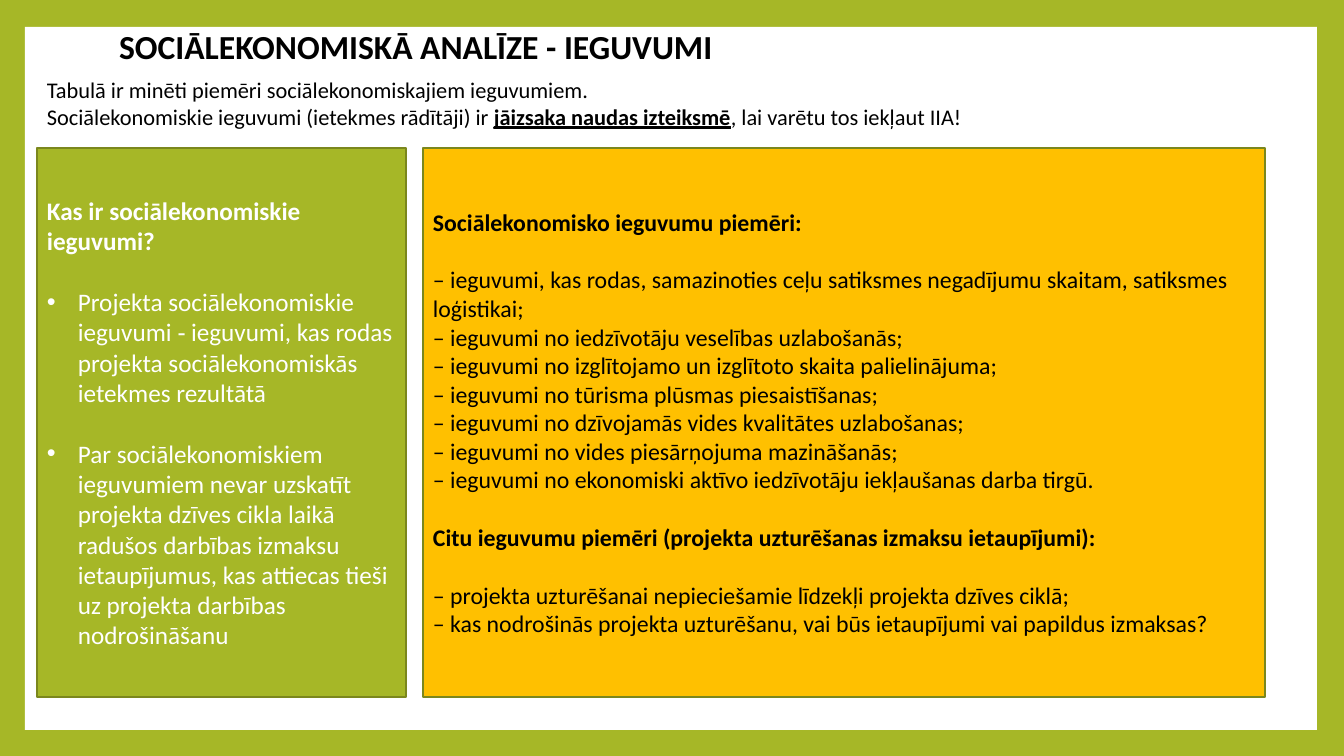
from lxml.etree import SubElement
from pptx import Presentation
from pptx.dml.color import RGBColor
from pptx.enum.shapes import MSO_SHAPE
from pptx.enum.text import MSO_ANCHOR, MSO_AUTO_SIZE, PP_ALIGN
from pptx.oxml.ns import qn
from pptx.util import Emu, Pt

WIDTH, HEIGHT = 1344, 756
GREEN, DARK_GREEN, AMBER = "A6B727", "7B871D", "FFC000"
BLACK, WHITE = "000000", "FFFFFF"
LINE_HEIGHT = 1.22  # Calibri line height relative to its size

TITLE = "SOCIĀLEKONOMISKĀ ANALĪZE - IEGUVUMI"
INTRO = [
    ["Tabulā ir minēti piemēri sociālekonomiskajiem ieguvumiem."],
    ["Sociālekonomiskie ieguvumi (ietekmes rādītāji) ir ",
     ("jāizsaka naudas izteiksmē", {"bold": True, "underline": True}),
     ", lai varētu tos iekļaut IIA!"],
]
DEFINITION_HEADING = "Kas ir sociālekonomiskie ieguvumi?"
DEFINITIONS = [
    "Projekta sociālekonomiskie ieguvumi ‐ ieguvumi, kas rodas projekta "
    "sociālekonomiskās ietekmes rezultātā",
    "Par sociālekonomiskiem ieguvumiem nevar uzskatīt projekta dzīves cikla laikā "
    "radušos darbības izmaksu ietaupījumus, kas attiecas tieši uz projekta darbības "
    "nodrošināšanu",
]
EXAMPLES = {
    "Sociālekonomisko ieguvumu piemēri:": [
        "– ieguvumi, kas rodas, samazinoties ceļu satiksmes negadījumu skaitam, "
        "satiksmes loģistikai;",
        "– ieguvumi no iedzīvotāju veselības uzlabošanās;",
        "– ieguvumi no izglītojamo un izglītoto skaita palielinājuma;",
        "– ieguvumi no tūrisma plūsmas piesaistīšanas;",
        "– ieguvumi no dzīvojamās vides kvalitātes uzlabošanas;",
        "– ieguvumi no vides piesārņojuma mazināšanās;",
        "– ieguvumi no ekonomiski aktīvo iedzīvotāju iekļaušanas darba tirgū.",
    ],
    "Citu ieguvumu piemēri (projekta uzturēšanas izmaksu ietaupījumi):": [
        "– projekta uzturēšanai nepieciešamie līdzekļi projekta dzīves ciklā;",
        "– kas nodrošinās projekta uzturēšanu, vai būs ietaupījumi vai papildus izmaksas?",
    ],
}


def px(length):
    return Emu(round(length * 12192000 / WIDTH))


def color(value):
    return RGBColor.from_string(value)


def set_all(target, values):
    for name, value in values.items():
        setattr(target, name, value)


class SlideBuilder:
    font = "Calibri"

    def __init__(self, deck, background):
        self.page = deck.slides.add_slide(deck.slide_layouts[5])
        fill = self.page.background.fill
        fill.solid()
        fill.fore_color.rgb = color(background)

    def title(self, text, bounds):
        box = self.page.shapes.title
        set_all(box, dict(zip(("left", "top", "width", "height"), map(px, bounds))))
        self.prepare(box, MSO_ANCHOR.MIDDLE)
        self.paragraph(box, [text], 24, BLACK, bold=True, line_spacing=0.9)

    def text(self, bounds):
        box = self.page.shapes.add_textbox(*map(px, bounds))
        self.prepare(box, MSO_ANCHOR.TOP)
        return box

    def panel(self, bounds, fill, line=None):
        box = self.page.shapes.add_shape(MSO_SHAPE.RECTANGLE, *map(px, bounds))
        box.shadow.inherit = False
        box.fill.solid()
        box.fill.fore_color.rgb = color(fill)
        if line:
            box.line.color.rgb = color(line)
            box.line.width = Pt(1.5)
        else:
            box.line.fill.background()
        self.prepare(box, MSO_ANCHOR.MIDDLE)
        return box

    def prepare(self, box, anchor):
        set_all(box.text_frame, {"word_wrap": True, "auto_size": MSO_AUTO_SIZE.NONE,
                                 "vertical_anchor": anchor})

    def paragraph(self, box, parts, size, ink, bold=False, gap=False, bullet=False,
                  line_spacing=None):
        """Add a paragraph; gap leaves one line above it, parts may carry formats."""
        frame = box.text_frame
        para = frame.paragraphs[0]
        if para.runs:
            para = frame.add_paragraph()
        set_all(para, {"alignment": PP_ALIGN.LEFT, "line_spacing": line_spacing,
                       "space_before": Pt(round(size * LINE_HEIGHT, 1) if gap else 0)})
        if bullet:
            properties = para._p.get_or_add_pPr()
            properties.set("marL", str(px(31)))
            properties.set("indent", str(-px(31)))
            SubElement(properties, qn("a:buFont"), typeface="Arial")
            SubElement(properties, qn("a:buChar"), char="•")
        for part in parts:
            words, extra = part if isinstance(part, tuple) else (part, {})
            span = para.add_run()
            span.text = words
            set_all(span.font, {"name": self.font, "size": Pt(size), "bold": bold, **extra})
            span.font.color.rgb = color(ink)


def main():
    deck = Presentation()
    set_all(deck, {"slide_width": px(WIDTH), "slide_height": px(HEIGHT)})
    slide = SlideBuilder(deck, GREEN)

    sheet = slide.panel((25, 27, 1292, 703), WHITE).element
    sheet.getparent().insert(2, sheet)  # behind the title
    slide.title(TITLE, (109, 27, 1169, 43))

    intro = slide.text((37, 71, 1228, 119))
    for parts in INTRO:
        slide.paragraph(intro, parts, 16, BLACK)

    definition = slide.panel((37, 148, 369, 549), GREEN, DARK_GREEN)
    slide.paragraph(definition, [DEFINITION_HEADING], 18, WHITE, bold=True)
    for item in DEFINITIONS:
        slide.paragraph(definition, [item], 18, WHITE, gap=True, bullet=True)

    examples = slide.panel((423, 148, 842, 549), AMBER, DARK_GREEN)
    for group, (heading, items) in enumerate(EXAMPLES.items()):
        slide.paragraph(examples, [heading], 17, BLACK, bold=True, gap=group > 0)
        for index, item in enumerate(items):
            slide.paragraph(examples, [item], 17, BLACK, gap=index == 0)

    deck.save("out.pptx")


if __name__ == "__main__":
    main()
